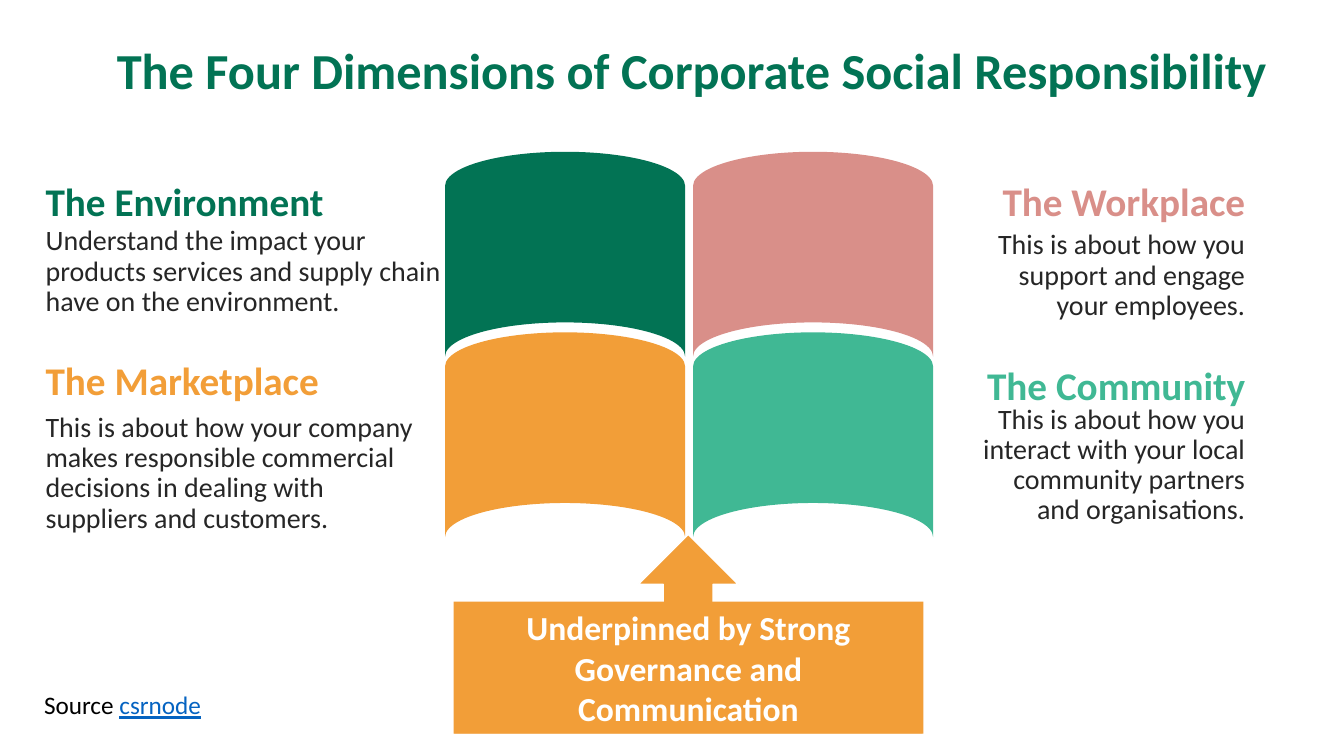
from pptx import Presentation
from pptx import util as u
from pptx.dml.color import RGBColor
from pptx.enum import shapes, text

GREEN = RGBColor(0x02, 0x73, 0x54)
ROSE = RGBColor(0xD9, 0x8F, 0x89)
AMBER = RGBColor(0xF2, 0x9E, 0x38)
MINT = RGBColor(0x40, 0xB8, 0x94)
DARK = RGBColor(0x26, 0x26, 0x26)
BLACK = RGBColor(0, 0, 0)
WHITE = RGBColor(0xFF, 0xFF, 0xFF)
BLUE = RGBColor(0x05, 0x63, 0xC1)
LEFT, RIGHT, MID = text.PP_ALIGN.LEFT, text.PP_ALIGN.RIGHT, text.PP_ALIGN.CENTER
KIND = shapes.MSO_SHAPE

PARTS = [
    ("The Environment", "Understand the impact your products services and "
     "supply chain have on the environment.", GREEN, 4.47, 5.59, 10.54),
    ("The Workplace", "This is about how you support and engage "
     "your employees.", ROSE, 4.47, 5.69, 7.47),
    ("The Marketplace", "This is about how your company makes responsible "
     "commercial decisions in dealing with suppliers and customers.",
     AMBER, 8.99, 10.29, 9.91),
    ("The Community", "This is about how you interact with your local "
     "community partners and organisations.", MINT, 9.12, 10.08, 7.47),
]


def style(run, size, color, bold=False):
    font = run.font
    font.name = "Calibri"
    font.size = u.Pt(size)
    font.bold = bold
    font.color.rgb = color


def write(shape, words, size, color, bold=False, align=LEFT, space=0.9):
    frame = shape.text_frame
    frame.word_wrap = True
    frame.auto_size = text.MSO_AUTO_SIZE.NONE
    frame.text = words
    par = frame.paragraphs[0]
    par.alignment = align
    par.line_spacing = space
    style(par.runs[0], size, color, bold)
    return par


def add_text(slide, box, *args, **look):
    return write(slide.shapes.add_textbox(*map(u.Cm, box)), *args, **look)


def add_block(slide, kind, box, color, turn=0):
    shape = slide.shapes.add_shape(kind, *map(u.Cm, box))
    shape.rotation = turn
    shape.shadow.inherit = False
    shape.fill.solid()
    shape.fill.fore_color.rgb = color
    shape.line.fill.background()
    return shape


def add_title(slide, words):
    title = slide.shapes.title
    title.left, title.top = u.Cm(0), u.Cm(1.04)
    title.width, title.height = u.Cm(33.87), u.Cm(2.64)
    title.text_frame.vertical_anchor = text.MSO_ANCHOR.TOP
    title.text_frame.margin_left = u.Cm(1.27)
    write(title, words, 36, GREEN, True, MID)


def add_part(slide, spot, head, body, color, top, low, width):
    row, col = divmod(spot, 2)
    add_block(slide, KIND.FLOWCHART_STORED_DATA,
              (11.66 + 6.25 * col, 3.38 + 4.55 * row, 5.16, 6.05), color, 90)
    left, align = (24.16, RIGHT) if col else (0.9, LEFT)
    add_text(slide, (left, top, width, 1.96), head, 28, color, True, align)
    add_text(slide, (left, low, width, 1.96), body, 20, DARK, align=align)


def add_base(slide, words):
    arrow = add_block(slide, KIND.RIGHT_ARROW_CALLOUT,
                      (14.83, 10.06, 5.03, 11.84), AMBER, 270)
    arrow.line.color.rgb = WHITE
    arrow.line.width = u.Pt(1)
    base = add_block(slide, KIND.RECTANGLE, (11.43, 15.16, 11.84, 3.33), AMBER)
    base.text_frame.vertical_anchor = text.MSO_ANCHOR.MIDDLE
    write(base, words, 24, WHITE, True, MID, 1.0)


def add_source(slide, name):
    par = add_text(slide, (0.86, 17.25, 8.38, 1.04), "Source ", 18, BLACK, space=1.0)
    run = par.add_run()
    run.text = name
    style(run, 18, BLUE)
    run.font.underline = True


def main():
    deck = Presentation()
    deck.slide_width, deck.slide_height = u.Cm(33.87), u.Cm(19.05)
    slide = deck.slides.add_slide(deck.slide_layouts[5])
    add_title(slide, "The Four Dimensions of Corporate Social Responsibility")
    for spot, part in enumerate(PARTS):
        add_part(slide, spot, *part)
    add_source(slide, "csrnode")
    add_base(slide, "Underpinned by Strong Governance and Communication")
    deck.save("out.pptx")


if __name__ == "__main__":
    main()
